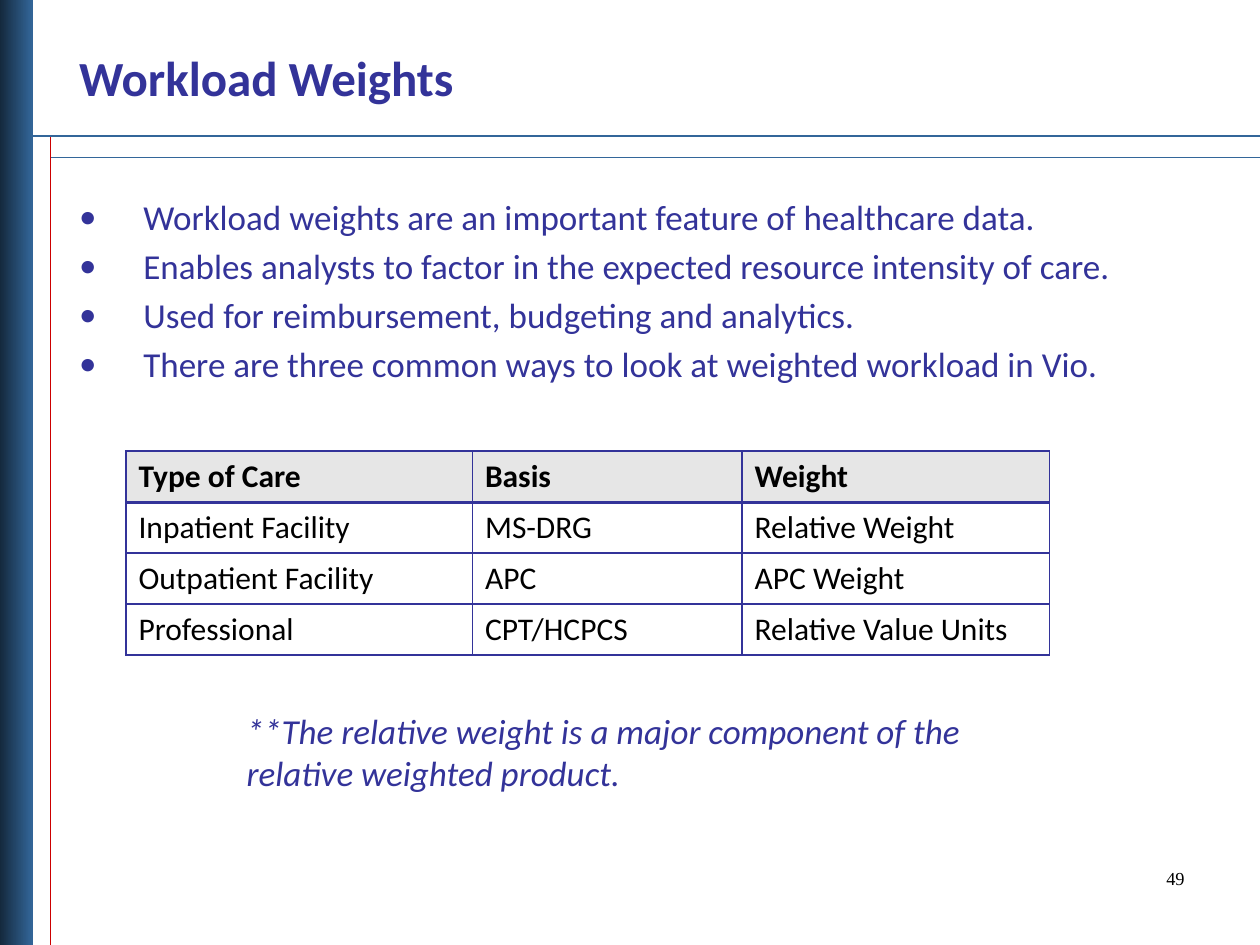
from lxml import etree
from pptx import Presentation
from pptx.dml.color import RGBColor
from pptx.enum.shapes import MSO_CONNECTOR, MSO_SHAPE
from pptx.enum.text import PP_ALIGN
from pptx.oxml.ns import qn
from pptx.util import Inches, Pt

LINE = MSO_CONNECTOR.STRAIGHT
RECT = MSO_SHAPE.RECTANGLE
LEFT, RIGHT = PP_ALIGN.LEFT, PP_ALIGN.RIGHT

W, H = 10, 7.5
MARGIN = 0.53
RULE_X, RULE_Y = 0.4, 1.08
INDENT = 0.51

INDIGO, STEEL, NAVY, RED = "333399", "336699", "14293D", "CC0000"
BLACK, WHITE, GREY = "000000", "FFFFFF", "E6E6E6"

BULLETS = [
    "Workload weights are an important feature of healthcare data.",
    "Enables analysts to factor in the expected resource intensity of care.",
    "Used for reimbursement, budgeting and analytics.",
    "There are three common ways to look at weighted workload in Vio.",
]
COLUMNS = [2.75, 2.14, 2.44]
ROWS = [
    ["Type of Care", "Basis", "Weight"],
    ["Inpatient Facility", "MS-DRG", "Relative Weight"],
    ["Outpatient Facility", "APC", "APC Weight"],
    ["Professional", "CPT/HCPCS", "Relative Value Units"],
]
NOTE = "**The relative weight is a major component of the relative weighted product."


def rgb(color):
    return RGBColor.from_string(color)


def style(p, size, color, font="Calibri", bold=False, italic=False):
    for r in p.runs:
        r.font.size, r.font.name = Pt(size), font
        r.font.bold, r.font.italic = bold, italic
        r.font.color.rgb = rgb(color)


def add_text(slide, box, lines, size, color=INDIGO, align=LEFT, **font):
    sp = slide.shapes.add_textbox(*map(Inches, box))
    tf = sp.text_frame
    tf.word_wrap = True
    tf.text = "\n".join(lines)
    for p in tf.paragraphs:
        p.alignment = align
        style(p, size, color, **font)
    return tf


def add_bullets(tf):
    for p in tf.paragraphs:
        p.space_before = Pt(4)
        pPr = p._p.get_or_add_pPr()
        pPr.set("marL", str(Inches(INDENT)))
        pPr.set("indent", str(-Inches(INDENT)))
        etree.SubElement(pPr, qn("a:buFont")).set("typeface", "Calibri")
        etree.SubElement(pPr, qn("a:buChar")).set("char", "•")


def add_rule(slide, x1, y1, x2, y2, color, width):
    ln = slide.shapes.add_connector(LINE, *map(Inches, (x1, y1, x2, y2)))
    ln.line.color.rgb = rgb(color)
    ln.line.width = Pt(width)
    etree.SubElement(ln._element.spPr, qn("a:effectLst"))


def add_side_band(slide):
    sp = slide.shapes.add_shape(RECT, 0, 0, Inches(0.26), Inches(H))
    sp.shadow.inherit = False
    sp.line.fill.background()
    sp.fill.gradient()
    sp.fill.gradient_angle = 0
    for stop, color in zip(sp.fill.gradient_stops, (NAVY, STEEL)):
        stop.color.rgb = rgb(color)


def set_borders(cell, widths):
    tcPr = cell._tc.get_or_add_tcPr()
    for side, width in zip("LRTB", widths):
        ln = etree.SubElement(tcPr, qn("a:ln" + side), w=str(Pt(width)))
        fill = etree.SubElement(ln, qn("a:solidFill"))
        etree.SubElement(fill, qn("a:srgbClr"), val=INDIGO)


def add_care_table(slide, x, y, height):
    box = map(Inches, (x, y, sum(COLUMNS), height))
    table = slide.shapes.add_table(len(ROWS), len(COLUMNS), *box).table
    for column, width in zip(table.columns, COLUMNS):
        column.width = Inches(width)
    for i, row in enumerate(ROWS):
        header = i == 0
        for j, text in enumerate(row):
            cell = table.cell(i, j)
            cell.text = text
            style(cell.text_frame.paragraphs[0], 18, BLACK, bold=header)
            # The rule between header and body is twice as thick
            set_borders(cell, (1, 1, 2 if i == 1 else 1, 2 if header else 1))
            cell.fill.solid()
            cell.fill.fore_color.rgb = rgb(GREY if header else WHITE)


def main():
    prs = Presentation()
    prs.slide_width, prs.slide_height = Inches(W), Inches(H)
    slide = prs.slides.add_slide(prs.slide_layouts[6])

    # Frame: rules and side band
    add_rule(slide, RULE_X, 1.25, W, 1.25, STEEL, 1)
    add_rule(slide, RULE_X, RULE_Y, RULE_X, H, RED, 0.75)
    add_rule(slide, 0, RULE_Y, W, RULE_Y, STEEL, 1.5)
    add_side_band(slide)

    # Title and bullets
    add_text(slide, (MARGIN, 0.33, 9.12, 0.57), ["Workload Weights"], 28, bold=True)
    add_bullets(add_text(slide, (MARGIN, 1.5, 9, 4.95), BULLETS, 20))

    # Table with its note
    add_care_table(slide, 1, 3.58, 1.62)
    add_text(slide, (1.86, 5.58, 6.33, 0.77), [NOTE], 20, italic=True)

    # Slide number
    add_text(slide, (7.17, 6.83, 2.33, 0.52), ["49"], 10.5, BLACK, RIGHT,
             font="Times New Roman")

    prs.save("out.pptx")


if __name__ == "__main__":
    main()
